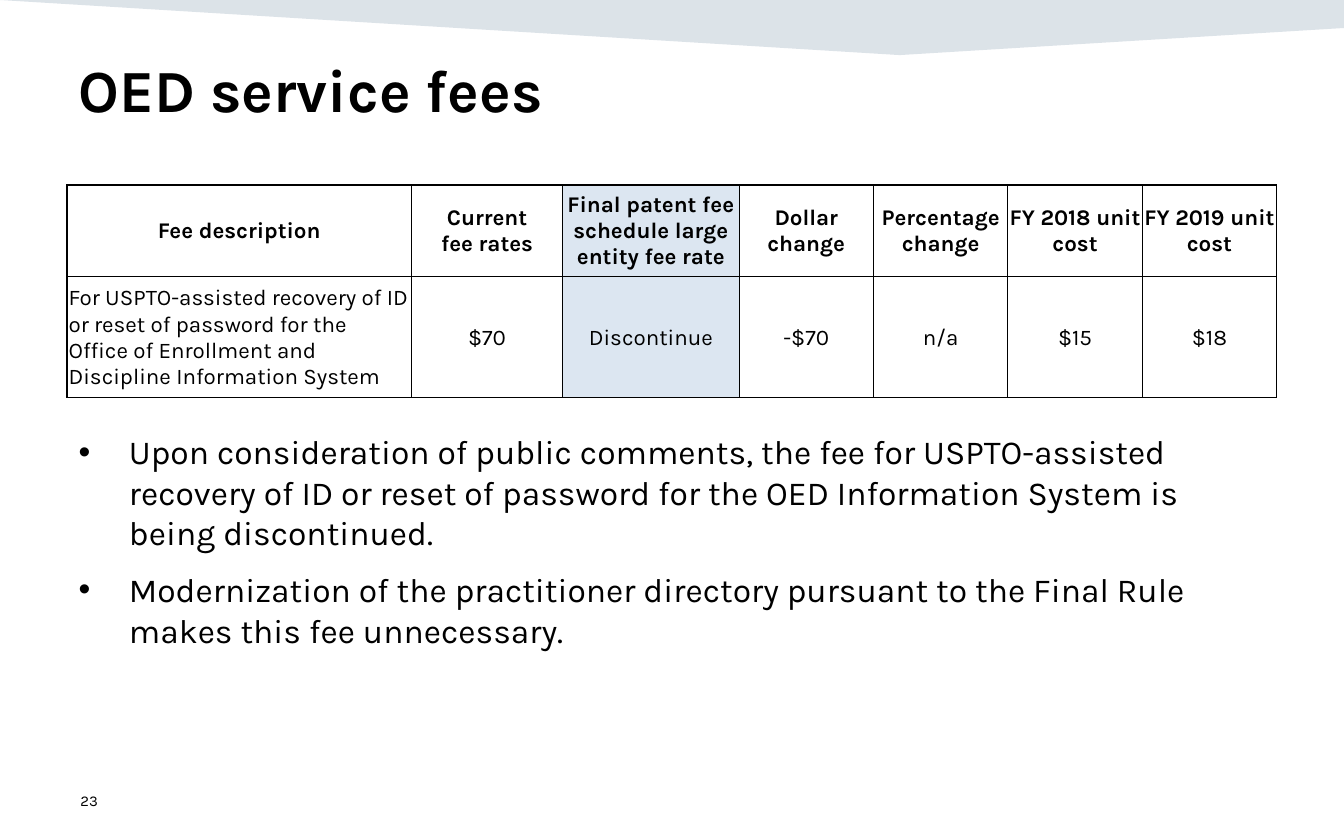
from lxml import etree
from pptx import Presentation
from pptx.dml.color import RGBColor
from pptx.enum.text import MSO_ANCHOR, PP_ALIGN
from pptx.oxml.ns import qn
from pptx.util import Pt

TOP, MIDDLE = MSO_ANCHOR.TOP, MSO_ANCHOR.MIDDLE
LEFT, CENTER = PP_ALIGN.LEFT, PP_ALIGN.CENTER
FONT = "Karla"
COLORS = {"text": "000000", "band": "164469", "white": "FFFFFF", "highlight": "DCE6F1"}

TABLE_ROWS = [
    ["Fee description", "Current\nfee rates",
     "Final patent fee schedule large entity fee rate", "Dollar change",
     "Percentage change", "FY 2018 unit cost", "FY 2019 unit cost"],
    ["For USPTO-assisted recovery of ID or reset of password for the Office of "
     "Enrollment and Discipline Information System",
     "$70", "Discontinue", "-$70", "n/a", "$15", "$18"],
]
COLUMN_WIDTHS = [184.5, 81, 94.5, 72, 72, 72, 72]
ROW_HEIGHTS = [49, 65]
HIGHLIGHT_COLUMN = 2
BULLETS = [
    "Upon consideration of public comments, the fee for USPTO-assisted recovery of ID "
    "or reset of password for the OED Information System is being discontinued.",
    "Modernization of the practitioner directory pursuant to the Final Rule makes this "
    "fee unnecessary.",
]


def set_attributes(target, values):
    for name, value in values.items():
        setattr(target, name, value)


def style_paragraphs(frame, size, bold=False, alignment=LEFT):
    for paragraph in frame.paragraphs:
        paragraph.alignment = alignment
        for run in paragraph.runs:
            set_attributes(run.font, {"name": FONT, "size": Pt(size), "bold": bold})
            run.font.color.rgb = RGBColor.from_string(COLORS["text"])


def add_band(slide):
    builder = slide.shapes.build_freeform(0, 0)
    points = [(720, 0), (720, 15), (482, 29.5)]
    builder.add_line_segments([(Pt(x), Pt(y)) for x, y in points], close=True)
    band = builder.convert_to_shape()
    band.shadow.inherit = False
    band.line.fill.background()
    band.fill.solid()
    band.fill.fore_color.rgb = RGBColor.from_string(COLORS["band"])
    color = band._element.spPr.find(qn("a:solidFill")).find(qn("a:srgbClr"))
    etree.SubElement(color, qn("a:alpha"), val="15000")


def add_text(slide, box, text, size, bold=False, anchor=TOP):
    shape = slide.shapes.add_textbox(*(Pt(value) for value in box))
    frame = shape.text_frame
    set_attributes(frame, {"word_wrap": True, "vertical_anchor": anchor, "text": text})
    style_paragraphs(frame, size, bold)
    return frame


def add_bullets(frame, indent, space_before):
    for paragraph in frame.paragraphs:
        paragraph.space_before = Pt(space_before)
        properties = paragraph._p.get_or_add_pPr()
        properties.set("marL", str(Pt(indent)))
        properties.set("indent", str(-Pt(indent)))
        etree.SubElement(properties, qn("a:buFont"), typeface="Arial")
        etree.SubElement(properties, qn("a:buChar"), char="•")


def add_borders(cell, widths):
    properties = cell._tc.get_or_add_tcPr()
    for side, width in widths.items():
        line = etree.SubElement(properties, qn(f"a:ln{side}"), w=str(Pt(width)))
        fill = etree.SubElement(line, qn("a:solidFill"))
        etree.SubElement(fill, qn("a:srgbClr"), val=COLORS["text"])


def format_cell(cell, text, row, column):
    is_header = row == 0
    is_description = column == 0
    set_attributes(cell, {
        "text": text, "vertical_anchor": MIDDLE, "margin_left": Pt(0.75),
        "margin_right": Pt(0.75), "margin_top": Pt(0.75), "margin_bottom": 0,
    })
    alignment = LEFT if is_description and not is_header else CENTER
    style_paragraphs(cell.text_frame, 12, is_header, alignment)
    add_borders(cell, {"L": 1 if is_description else 0.5, "R": 0.5,
                       "T": 1 if is_header else 0.5, "B": 0.5})
    color = COLORS["highlight" if column == HIGHLIGHT_COLUMN else "white"]
    cell.fill.solid()
    cell.fill.fore_color.rgb = RGBColor.from_string(color)


def add_fee_table(slide, left, top):
    size = (sum(COLUMN_WIDTHS), sum(ROW_HEIGHTS))
    table = slide.shapes.add_table(len(ROW_HEIGHTS), len(COLUMN_WIDTHS), Pt(left), Pt(top),
                                   *(Pt(value) for value in size)).table
    set_attributes(table, {"first_row": False, "horz_banding": False})
    for column, width in zip(table.columns, COLUMN_WIDTHS):
        column.width = Pt(width)
    for row, height in zip(table.rows, ROW_HEIGHTS):
        row.height = Pt(height)
    for row, texts in enumerate(TABLE_ROWS):
        for column, text in enumerate(texts):
            format_cell(table.cell(row, column), text, row, column)


def main():
    presentation = Presentation()
    set_attributes(presentation, {"slide_width": Pt(720), "slide_height": Pt(450)})
    slide = presentation.slides.add_slide(presentation.slide_layouts[6])
    add_band(slide)
    add_text(slide, (36, 417, 162, 24), "23", 8, anchor=MIDDLE)
    body = add_text(slide, (35, 227.5, 648, 183.5), "\n".join(BULLETS), 18)
    add_bullets(body, indent=27, space_before=9)
    add_text(slide, (35, 24.5, 648, 75), "OED service fees", 32, bold=True)
    add_fee_table(slide, 36, 99)
    presentation.save("out.pptx")


if __name__ == "__main__":
    main()
